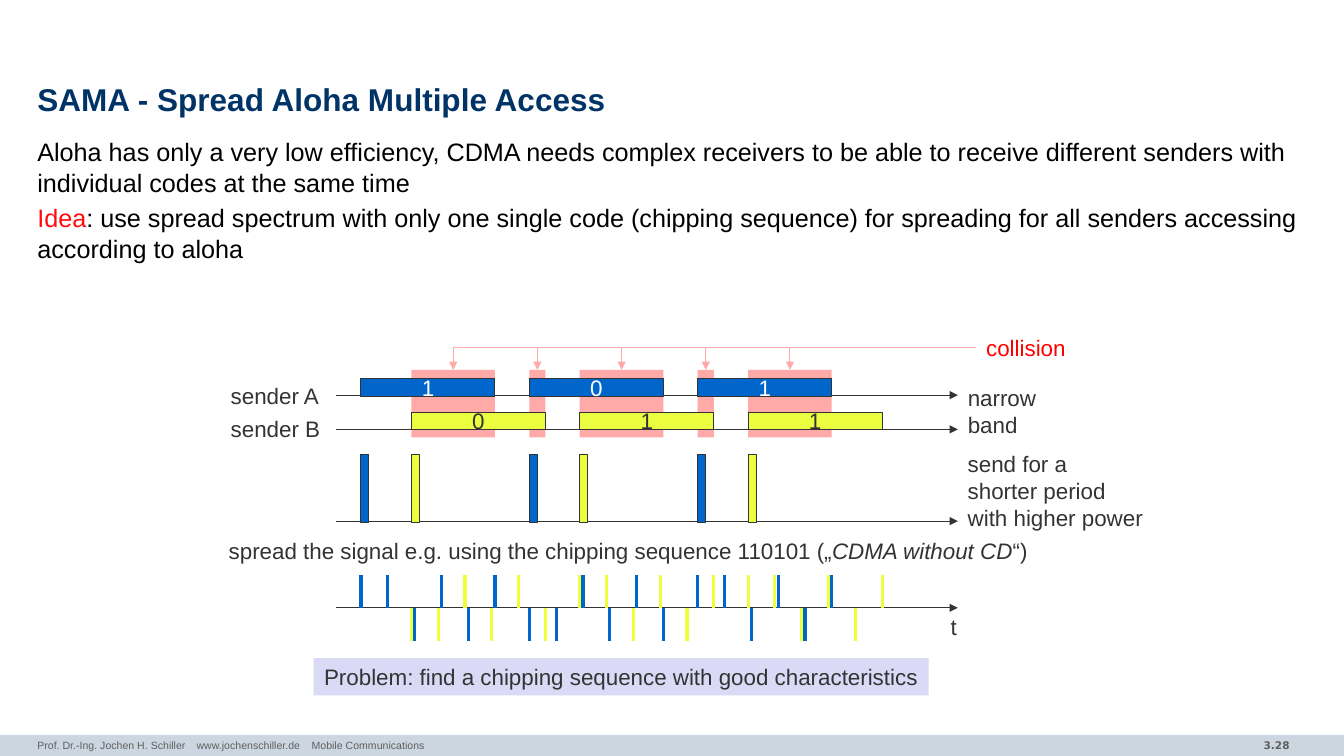
from dataclasses import dataclass
from lxml import etree
from pptx import Presentation
from pptx.dml.color import RGBColor
from pptx.enum import shapes, text
from pptx.oxml import ns
from pptx.util import Inches, Pt


@dataclass(frozen=True)
class Theme:
    blue: str = "0066CC"
    lime: str = "ECFE40"
    pink: str = "FFA9A9"
    red: str = "FF0000"
    idea: str = "FF0D0D"
    navy: str = "003366"
    black: str = "000000"
    white: str = "FFFFFF"
    ink: str = "333333"
    gray: str = "5F5F5F"
    bar: str = "CCD6E0"
    lilac: str = "DADAF6"
    font: str = "Arial"
    foot: str = "DejaVu Sans"
    title: float = 22.5
    body: float = 18
    label: float = 16
    small: float = 7.5
    thin: float = 0.75
    thick: float = 2.25


T = Theme()
ALIGN = text.PP_ALIGN
FIT = text.MSO_AUTO_SIZE
MID = text.MSO_ANCHOR.MIDDLE
LABEL = {"size": Pt(T.label), "name": T.font, "color": T.ink}
FRAME = {"vertical_anchor": MID, "word_wrap": False, "auto_size": FIT.SHAPE_TO_FIT_TEXT}
FLAT = dict.fromkeys(("margin_left", "margin_top", "margin_right", "margin_bottom"), 0)

CODE = "110101"
BITS_A, BITS_B = "101", "011"
START_A, START_B = 3.58, 4.08
STEP, SPAN = 1.67, 1.33
CHIP = SPAN / (len(CODE) - 1)
AXIS = 6.03


def apply(item, values):
    for key, value in values.items():
        if key == "color":
            item.color.rgb = RGBColor.from_string(value)
        else:
            setattr(item, key, value)


def write(frame, paras, font=LABEL, box=FRAME, para=None):
    apply(frame, box)
    for i, runs in enumerate(paras):
        p = frame.paragraphs[0] if i == 0 else frame.add_paragraph()
        apply(p, para or {})
        for words, extra in runs:
            for j, line in enumerate(words.split("\n")):
                if j:
                    p.add_line_break()
                r = p.add_run()
                r.text = line
                apply(r.font, {**font, **extra})


def place(item, at):
    apply(item, dict(zip(("left", "top", "width", "height"), map(Inches, at))))


def label(slide, at, *lines, font=LABEL, box=FRAME, para=None):
    item = slide.shapes.add_textbox(*map(Inches, at))
    paras = [[(line, {})] if isinstance(line, str) else line for line in lines]
    write(item.text_frame, paras, font, box, para)
    return item


def rect(slide, at, fill, edge=None):
    item = slide.shapes.add_shape(shapes.MSO_SHAPE.RECTANGLE, *map(Inches, at))
    item.shadow.inherit = False
    item.fill.solid()
    item.fill.fore_color.rgb = RGBColor.from_string(fill)
    if edge:
        apply(item.line, {"color": edge, "width": Pt(T.thin)})
    else:
        item.line.fill.background()
    return item


def wire(slide, ends, color, width=T.thin, arrow=False, kind=shapes.MSO_CONNECTOR.STRAIGHT):
    item = slide.shapes.add_connector(kind, *map(Inches, ends))
    apply(item.line, {"color": color, "width": Pt(width)})
    props = item.element.spPr
    if arrow:
        etree.SubElement(props.find(ns.qn("a:ln")), ns.qn("a:tailEnd"), type="triangle")
    etree.SubElement(props, ns.qn("a:effectLst"))
    return item


def bend(slide, source, target, ends):
    item = wire(slide, ends, T.pink, arrow=True, kind=shapes.MSO_CONNECTOR.ELBOW)
    item.begin_connect(source, 1)
    item.end_connect(target, 0)
    props = item.element.spPr
    props.find(ns.qn("a:prstGeom")).set("prst", "bentConnector2")
    form = props.find(ns.qn("a:xfrm"))
    form.attrib.pop("flipH", None)
    form.set("rot", "10800000")
    form.set("flipV", "1")


def starts(first):
    return [first + STEP * i for i in range(len(BITS_A))]


def clashes(slide):
    spans = []
    for a in starts(START_A):
        for b in starts(START_B):
            left, right = max(a, b), min(a, b) + SPAN
            if left < right:
                spans.append((left, right))
    return [(rect(slide, (l, 3.67, r - l, 0.67), T.pink), (l + r) / 2) for l, r in spans]


def sender(slide, first, bits, top, fill, color):
    for x, bit in zip(starts(first), bits):
        rect(slide, (x, 4.51, 0.08, 0.67), fill, T.ink)
        bar = rect(slide, (x, top, SPAN, 0.17), fill, T.ink)
        write(bar.text_frame, [[(bit, {"color": color})]],
              box={"vertical_anchor": MID, "word_wrap": False},
              para={"alignment": ALIGN.CENTER})


def chips(slide, first, bits, color):
    for x, bit in zip(starts(first), bits):
        for j, chip in enumerate(CODE):
            at = x + CHIP * j
            end = AXIS - 0.33 if chip == bit else AXIS + 0.33
            wire(slide, (at, AXIS, at, end), color, T.thick)


def heading(slide):
    title, body = slide.placeholders
    place(title, (0.37, 0.78, 12.6, 0.47))
    place(body, (0.37, 1.35, 12.6, 5.74))
    box = {**FLAT, "word_wrap": True, "auto_size": FIT.NONE}
    write(title.text_frame, [[("SAMA - Spread Aloha Multiple Access", {})]],
          {"size": Pt(T.title), "name": T.font, "color": T.navy, "bold": True},
          {**box, "vertical_anchor": MID},
          {"alignment": ALIGN.LEFT, "line_spacing": 0.85})
    write(body.text_frame, [
        [("Aloha has only a very low efficiency, CDMA needs complex receivers to be able to "
          "receive different senders with individual codes at the same time", {})],
        [("Idea", {"color": T.idea}),
         (": use spread spectrum with only one single code (chipping sequence) for spreading "
          "for all senders accessing according to aloha", {})],
    ], {"size": Pt(T.body), "name": T.font, "color": T.black},
        {**box, "vertical_anchor": text.MSO_ANCHOR.TOP},
        {"line_spacing": 1.02, "space_before": Pt(2.8)})
    body.text_frame.paragraphs[0].space_before = Pt(0)
    for p in body.text_frame.paragraphs:
        props = p._p.get_or_add_pPr()
        apply_indent = {"marL": "0", "indent": "0"}
        props.attrib.update(apply_indent)
        etree.SubElement(props, ns.qn("a:buNone"))


def footer(slide):
    rect(slide, (0, 7.29, 13.33, 0.21), T.bar)
    font = {"size": Pt(T.small), "name": T.font, "color": T.gray}
    box = {"word_wrap": True, "auto_size": FIT.NONE}
    label(slide, (11.1, 7.28, 1.79, 0.23), "3.28",
          font={**font, "name": T.foot, "bold": True}, box=box,
          para={"alignment": ALIGN.RIGHT})
    note = label(slide, (0.37, 7.28, 8.72, 0.22),
                 "Prof. Dr.-Ing. Jochen H. Schiller\twww.jochenschiller.de\tMobile Communications",
                 font=font, box={**box, "margin_left": 0, "margin_right": 0})
    props = note.text_frame.paragraphs[0]._p.get_or_add_pPr()
    tabs = etree.SubElement(props, ns.qn("a:tabLst"))
    for stop in (1.58, 2.72):
        etree.SubElement(tabs, ns.qn("a:tab"), pos=str(Inches(stop)), algn="l")


def diagram(slide):
    zones = clashes(slide)
    for y in (3.92, 4.26, 5.17, AXIS):
        wire(slide, (3.33, y, 9.5, y), T.ink, arrow=True)
    sender(slide, START_A, BITS_A, 3.76, T.blue, T.white)
    sender(slide, START_B, BITS_B, 4.09, T.lime, T.ink)
    chips(slide, START_A, BITS_A, T.blue)
    chips(slide, START_B, BITS_B, T.lime)
    label(slide, (2.19, 3.74, 1.09, 0.37), "sender A")
    label(slide, (2.19, 4.07, 1.09, 0.37), "sender B")
    label(slide, (9.5, 3.76, 0.88, 0.64), "narrow\nband")
    label(slide, (9.5, 4.42, 1.94, 0.9), "send for a", "shorter period", "with higher power")
    label(slide, (2.17, 5.28, 8.16, 0.37), [
        ("spread the signal e.g. using the chipping sequence 110101 („", {}),
        ("CDMA without CD", {"italic": True}), ("“)", {})])
    mid = {"alignment": ALIGN.CENTER}
    label(slide, (9.33, 6.03, 0.26, 0.37), "t", para=mid)
    issue = rect(slide, (3.11, 6.53, 6.1, 0.37), T.lilac)
    write(issue.text_frame,
          [[("Problem: find a chipping sequence with good characteristics", {})]], para=mid)
    crash = label(slide, (9.68, 3.26, 0.99, 0.37), "collision",
                  font={**LABEL, "color": T.red}, para=mid)
    for zone, x in zones:
        bend(slide, crash, zone, (9.68, 3.44, x, 3.67))


def main():
    deck = Presentation()
    apply(deck, {"slide_width": Inches(13.33), "slide_height": Inches(7.5)})
    slide = deck.slides.add_slide(deck.slide_layouts[1])
    heading(slide)
    footer(slide)
    diagram(slide)
    deck.save("out.pptx")


if __name__ == "__main__":
    main()
